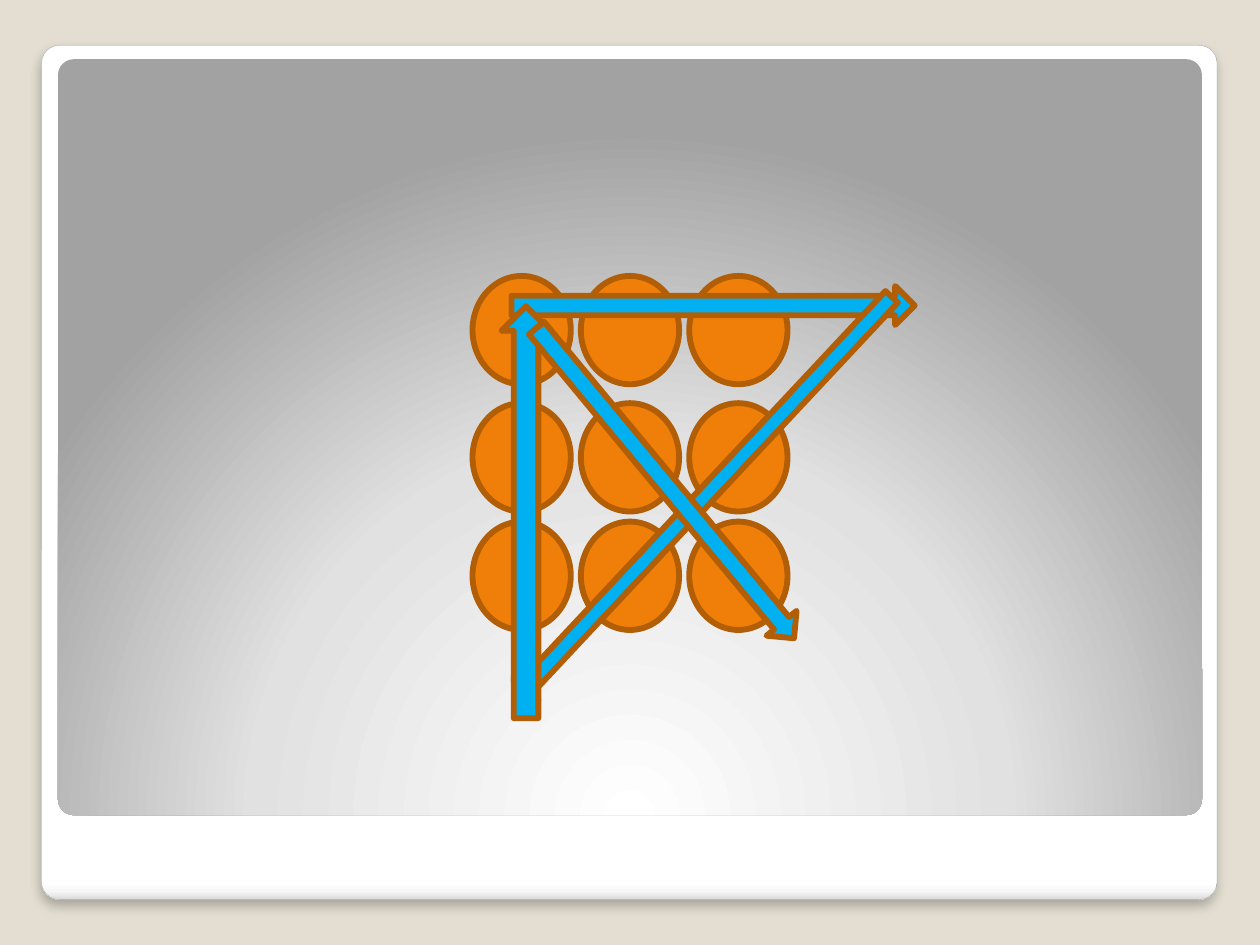
"""Build the nine-dots puzzle slide: a dot grid crossed by four arrows."""
import pptx
import pptx.dml.color
import pptx.enum.shapes
import pptx.oxml
import pptx.oxml.ns
import pptx.util

SHAPE = pptx.enum.shapes.MSO_SHAPE
NS = pptx.oxml.ns.nsdecls("a")
SLIDE_W, SLIDE_H = 10, 7.5
COLORS = {
    "background": "E3DED1",
    "frame_line": "A4A4A4",
    "shadow": "000000",
    "dot": "F07F09",
    "arrow": "00B0F0",
    "outline": "B25E07",
}
FRAME_STOPS = [(0, "FFFFFF"), (98, "FFFFFF"), (99, "F7F7F7"), (100, "DADADA")]
PANEL_STOPS = [(0, "FFFFFF"), (55, "E1E1E1"), (100, "A2A2A2")]
FRAME_DIRECTION = '<a:lin ang="5400000" scaled="0"/>'
PANEL_DIRECTION = (
    '<a:path path="circle">'
    '<a:fillToRect l="50000" t="175000" r="50000" b="-75000"/></a:path>'
)
DOT_W, DOT_H = 0.78, 0.86
DOT_LEFT, DOT_PITCH = 3.75, 0.86
DOT_TOPS = [2.19, 3.2, 4.14]
ARROWS = [
    {"box": (4.06, 2.27, 3.2, 0.31), "rotation": 0},
    {"box": (3.39, 3.82, 4.38, 0.27), "rotation": 133.1},
    {"box": (2.54, 3.87, 3.27, 0.39), "rotation": 270},
    {"box": (3.68, 3.68, 3.2, 0.31), "rotation": 50.3},
]


def rgb(name):
    return pptx.dml.color.RGBColor.from_string(COLORS[name])


def add_shape(s, kind, box, fill=None, line=None, width=3.35, **formats):
    sp = s.shapes.add_shape(kind, *(pptx.util.Inches(v) for v in box))
    sp.shadow.inherit = False
    if fill:
        sp.fill.solid()
        sp.fill.fore_color.rgb = rgb(fill)
    if line:
        sp.line.color.rgb = rgb(line)
        sp.line.width = pptx.util.Pt(width)
    else:
        sp.line.fill.background()
    for name, value in formats.items():
        setattr(sp, name, value)
    return sp


def add_gradient_panel(s, box, stops, direction, **line):
    sp = add_shape(s, SHAPE.ROUNDED_RECTANGLE, box, **line)
    sp.adjustments[0] = 0.021
    sp.fill.background()
    spPr = sp.fill._xPr
    stop_xml = "".join(
        f'<a:gs pos="{pos * 1000}"><a:srgbClr val="{color}"/></a:gs>'
        for pos, color in stops
    )
    gradient = pptx.oxml.parse_xml(
        f'<a:gradFill {NS} rotWithShape="1"><a:gsLst>{stop_xml}</a:gsLst>'
        f"{direction}</a:gradFill>"
    )
    spPr.replace(spPr.find(pptx.oxml.ns.qn("a:noFill")), gradient)
    return sp


def add_soft_shadow(sp, alpha, blur, distance, angle):
    effects = sp.element.spPr.find(pptx.oxml.ns.qn("a:effectLst"))
    effects.append(pptx.oxml.parse_xml(
        f'<a:outerShdw {NS} blurRad="{pptx.util.Pt(blur)}" '
        f'dist="{pptx.util.Pt(distance)}" dir="{angle * 60000}" '
        f'algn="t" rotWithShape="0"><a:srgbClr val="{COLORS["shadow"]}">'
        f'<a:alpha val="{alpha * 1000}"/></a:srgbClr></a:outerShdw>'
    ))


def add_dots(s):
    for top in DOT_TOPS:
        for col in range(3):
            box = (DOT_LEFT + col * DOT_PITCH, top, DOT_W, DOT_H)
            add_shape(s, SHAPE.OVAL, box, "dot", "outline")


def add_arrows(s):
    for arrow in ARROWS:
        add_shape(s, SHAPE.RIGHT_ARROW, arrow["box"], "arrow", "outline",
                  rotation=arrow["rotation"])


def main():
    prs = pptx.Presentation()
    prs.slide_width = pptx.util.Inches(SLIDE_W)
    prs.slide_height = pptx.util.Inches(SLIDE_H)
    s = prs.slides.add_slide(prs.slide_layouts[6])
    s.background.fill.solid()
    s.background.fill.fore_color.rgb = rgb("background")
    frame = add_gradient_panel(s, (0.33, 0.36, 9.33, 6.78), FRAME_STOPS,
                               FRAME_DIRECTION, line="frame_line", width=0.16)
    add_soft_shadow(frame, alpha=25, blur=6, distance=4, angle=90)
    add_gradient_panel(s, (0.46, 0.47, 9.08, 6), PANEL_STOPS, PANEL_DIRECTION)
    add_dots(s)
    add_arrows(s)
    prs.save("out.pptx")


if __name__ == "__main__":
    main()
